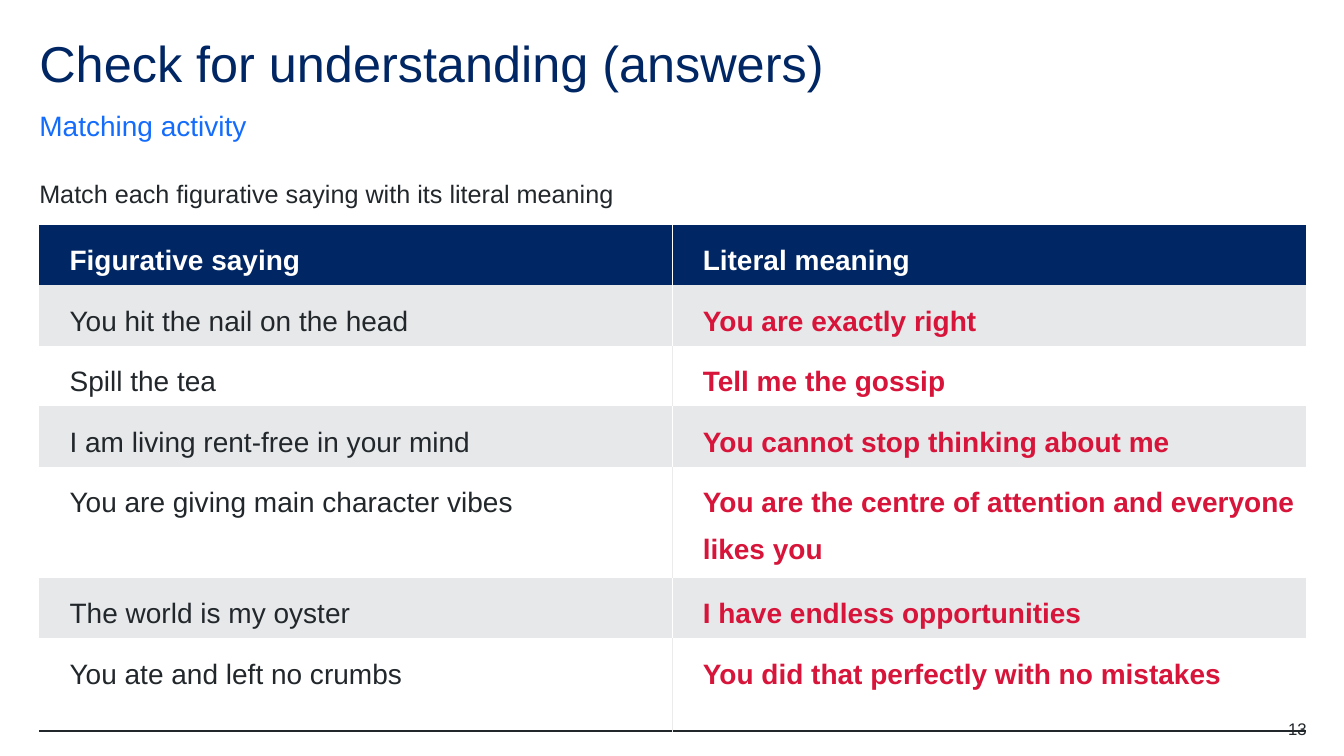
from dataclasses import dataclass

from lxml import etree
from pptx import Presentation
from pptx.dml.color import RGBColor
from pptx.enum.text import MSO_ANCHOR, PP_ALIGN
from pptx.oxml.ns import qn
from pptx.util import Inches, Pt

TOP, BOTTOM = MSO_ANCHOR.TOP, MSO_ANCHOR.BOTTOM
LEFT, RIGHT = PP_ALIGN.LEFT, PP_ALIGN.RIGHT


@dataclass(frozen=True)
class Theme:
    """Colours, typeface and type sizes of the deck."""
    font: str = "Arial"
    navy: str = "002664"
    blue: str = "146CFD"
    ink: str = "22272B"
    red: str = "D7153A"
    white: str = "FFFFFF"
    band: str = "E7E8EA"
    divider: str = "EBEBEB"
    title: int = 36
    body: int = 20
    prompt: int = 18
    footer: int = 12


class SlideBuilder:
    """Adds styled elements to the current slide."""

    def __init__(self, slide, theme):
        self.slide = slide
        self.theme = theme

    def fill_text(self, frame, text, size, color, bold=False, **paragraph_format):
        para = frame.paragraphs[0]
        for name, value in paragraph_format.items():
            setattr(para, name, value)
        span = para.add_run()
        span.text = text
        font_format = {"name": self.theme.font, "size": Pt(size), "bold": bold}
        for name, value in font_format.items():
            setattr(span.font, name, value)
        span.font.color.rgb = RGBColor.from_string(color)
        return para

    def text(self, bounds, text, size, color, anchor=TOP, **paragraph_format):
        box = self.slide.shapes.add_textbox(*map(Inches, bounds))
        frame_format = {"word_wrap": True, "vertical_anchor": anchor,
                        "margin_left": 0, "margin_top": 0,
                        "margin_right": 0, "margin_bottom": 0}
        for name, value in frame_format.items():
            setattr(box.text_frame, name, value)
        self.fill_text(box.text_frame, text, size, color, **paragraph_format)

    def borders(self, cell, colors):
        properties = cell._tc.get_or_add_tcPr()
        for position, side in enumerate("LRTB"):
            line = etree.Element(qn(f"a:ln{side}"), w=str(Pt(1)))
            properties.insert(position, line)
            if side in colors:
                fill = etree.SubElement(line, qn("a:solidFill"))
                etree.SubElement(fill, qn("a:srgbClr"), val=colors[side])
            else:
                etree.SubElement(line, qn("a:noFill"))

    def cell(self, cell, text, color, fill, bold, borders):
        cell.fill.solid()
        cell.fill.fore_color.rgb = RGBColor.from_string(fill)
        para = self.fill_text(cell.text_frame, text, self.theme.body, color, bold,
                              line_spacing=1.5, space_after=Pt(12))
        properties = para._p.get_or_add_pPr()
        properties.set("marL", str(Inches(0.2)))
        properties.set("indent", "0")
        self.borders(cell, borders)

    def table(self, bounds, rows, heights):
        theme = self.theme
        table = self.slide.shapes.add_table(
            len(rows), len(rows[0]), *map(Inches, bounds)).table
        for name in ("first_row", "horz_banding"):
            setattr(table, name, False)
        for row_index, (texts, height) in enumerate(zip(rows, heights)):
            table.rows[row_index].height = Inches(height)
            header = row_index == 0
            striped = row_index % 2 == 1
            fill = theme.navy if header else theme.band if striped else theme.white
            divider = theme.white if header or striped else theme.divider
            colors = (theme.white,) * 2 if header else (theme.ink, theme.red)
            for column, (text, color) in enumerate(zip(texts, colors)):
                borders = {"RL"[column]: divider}
                if row_index == len(rows) - 1:
                    borders["B"] = theme.ink
                self.cell(table.cell(row_index, column), text, color, fill,
                          header or column == 1, borders)


SAYINGS = [
    ("Figurative saying", "Literal meaning"),
    ("You hit the nail on the head", "You are exactly right"),
    ("Spill the tea", "Tell me the gossip"),
    ("I am living rent-free in your mind", "You cannot stop thinking about me"),
    ("You are giving main character vibes",
     "You are the centre of attention and everyone likes you"),
    ("The world is my oyster", "I have endless opportunities"),
    ("You ate and left no crumbs", "You did that perfectly with no mistakes"),
]


def main():
    """Build the answers slide and save the deck."""
    deck = Presentation()
    deck.slide_width, deck.slide_height = Inches(13.33), Inches(7.5)
    theme = Theme()
    page = SlideBuilder(deck.slides.add_slide(deck.slide_layouts[6]), theme)
    page.text((0.39, 0.39, 11.02, 0.6), "Check for understanding (answers)",
              theme.title, theme.navy, line_spacing=0.9)
    page.text((0.39, 1.07, 11.02, 0.34), "Matching activity", theme.body,
              theme.blue, BOTTOM, line_spacing=1.5, space_after=Pt(12))
    page.text((0.39, 1.77, 11.9, 0.3),
              "Match each figurative saying with its literal meaning",
              theme.prompt, theme.ink, alignment=LEFT)
    page.table((0.39, 2.23, 12.56, 4.67), SAYINGS,
               [0.54] * 4 + [1.04, 0.54, 0.92])
    page.text((12.17, 7.13, 0.79, 0.2), "13", theme.footer, theme.ink,
              alignment=RIGHT)
    deck.save("out.pptx")


if __name__ == "__main__":
    main()
